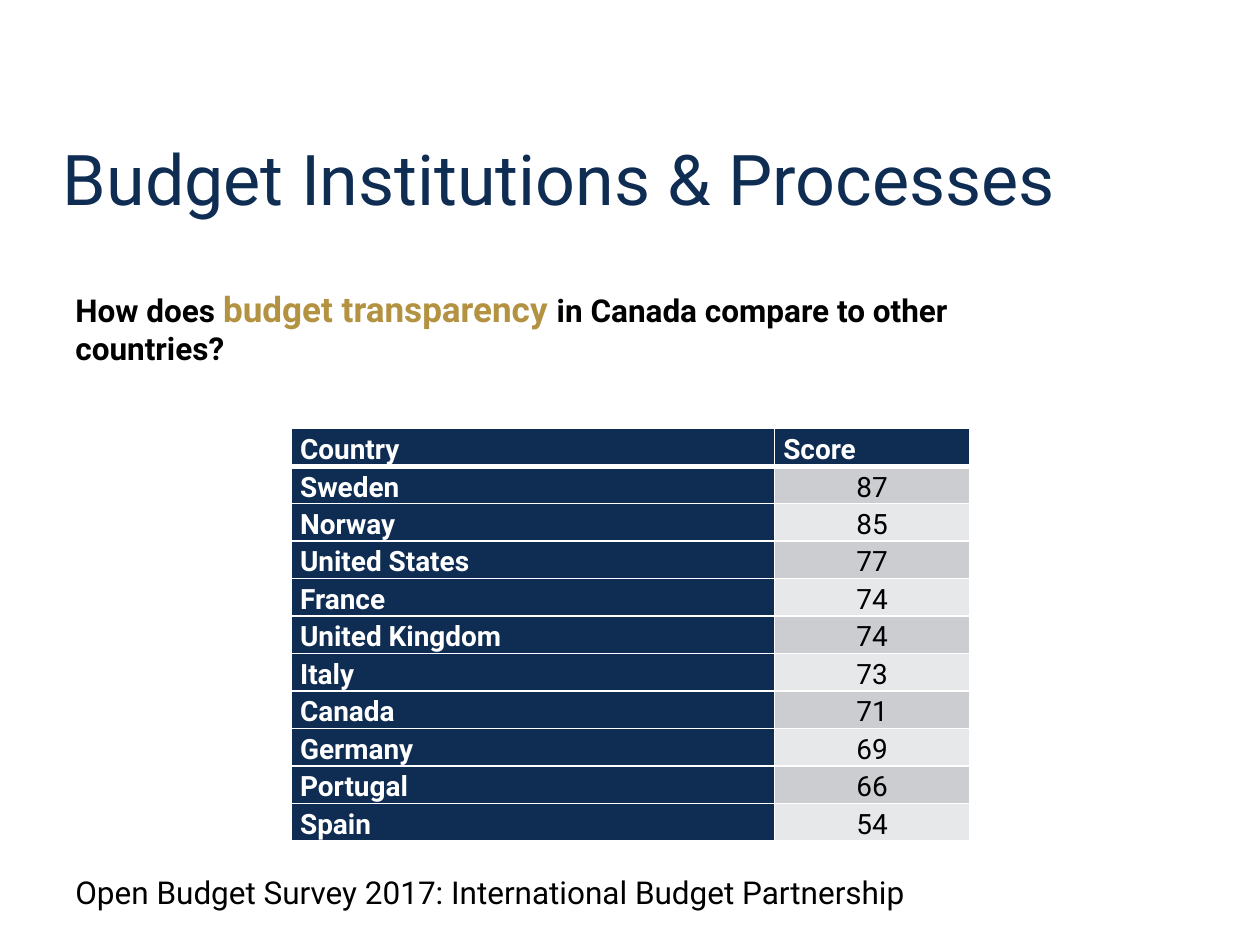
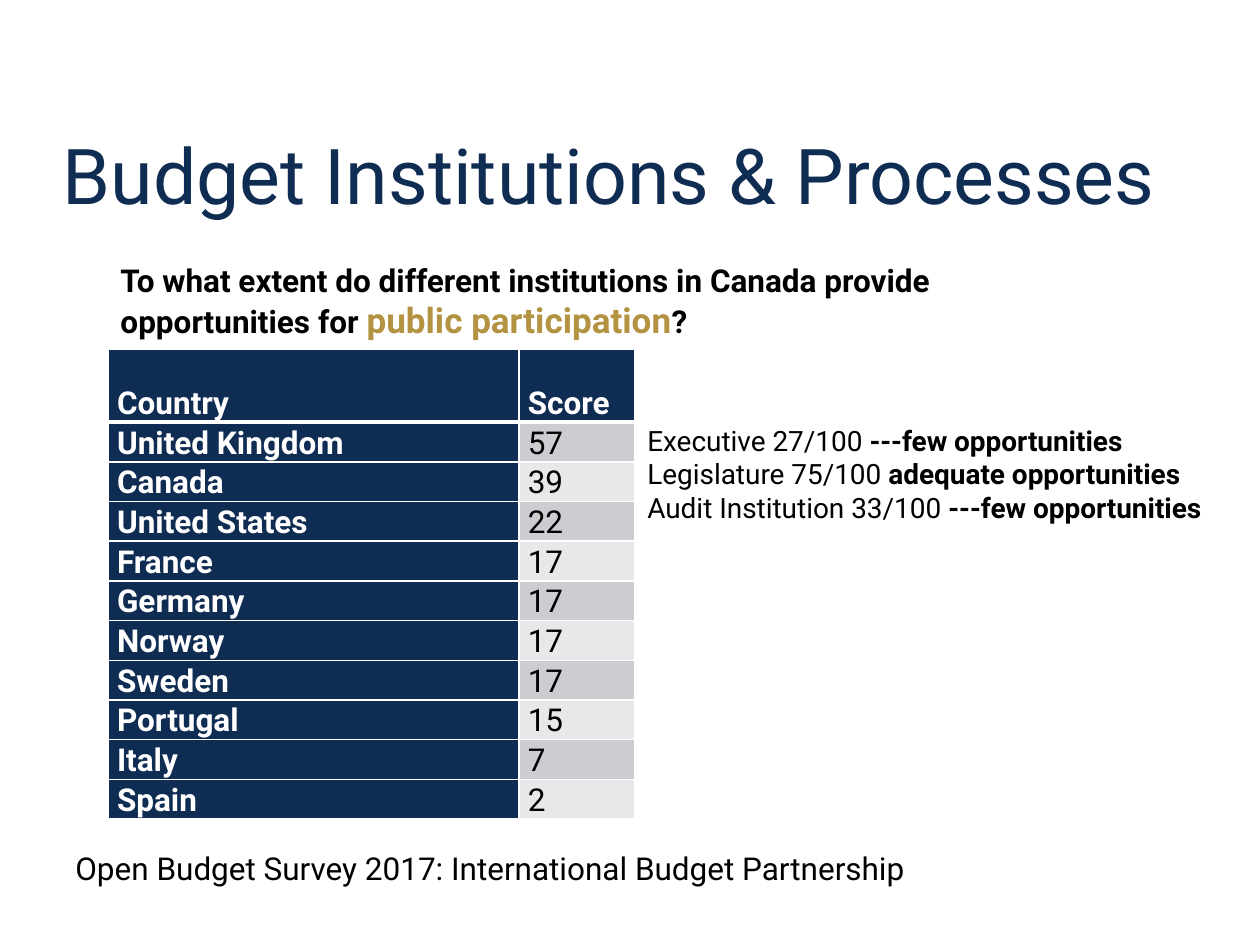
from dataclasses import dataclass

from lxml import etree
from pptx import Presentation
from pptx.dml.color import RGBColor
from pptx.enum.text import MSO_ANCHOR, MSO_AUTO_SIZE, PP_ALIGN
from pptx.oxml.ns import qn
from pptx.util import Cm, Pt

TOP, MIDDLE, BOTTOM = MSO_ANCHOR.TOP, MSO_ANCHOR.MIDDLE, MSO_ANCHOR.BOTTOM
LEFT, CENTER = PP_ALIGN.LEFT, PP_ALIGN.CENTER
GROW = MSO_AUTO_SIZE.SHAPE_TO_FIT_TEXT
NO_FIT = MSO_AUTO_SIZE.NONE


@dataclass(frozen=True)
class Theme:
    font: str = "Roboto"
    navy: str = "0F2C52"
    gold: str = "B39242"
    white: str = "FFFFFF"
    black: str = "000000"
    bands: tuple = ("CCCDD1", "E7E8E9")
    body: int = 18
    accent: int = 20
    small: int = 16
    thin: int = 1
    thick: int = 3


THEME = Theme()
MARGIN = 1.27
CONTENT_W = 22.86
TITLE = "Budget Institutions & Processes"
SOURCE = "Open Budget Survey 2017: International Budget Partnership"

TRANSPARENCY = [
    ("Sweden", 87), ("Norway", 85), ("United States", 77), ("France", 74),
    ("United Kingdom", 74), ("Italy", 73), ("Canada", 71), ("Germany", 69),
    ("Portugal", 66), ("Spain", 54),
]
PARTICIPATION = [
    ("United Kingdom", 57), ("Canada", 39), ("United States", 22),
    ("France", 17), ("Germany", 17), ("Norway", 17), ("Sweden", 17),
    ("Portugal", 15), ("Italy", 7), ("Spain", 2),
]
INSTITUTIONS = [
    ("Executive 27/100 ", "---few opportunities"),
    ("Legislature 75/100 ", "adequate opportunities"),
    ("Audit Institution 33/100 ", "---few opportunities"),
]


def style(font, size, color=THEME.black, bold=False):
    font.name = THEME.font
    font.size = Pt(size)
    font.bold = bold
    font.color.rgb = RGBColor.from_string(color)


def add_box(s, box, anchor=TOP, fit=GROW):
    """Add a wrapping text box at (left, top, width, height) in cm."""
    tf = s.shapes.add_textbox(*map(Cm, box)).text_frame
    tf.word_wrap = True
    tf.auto_size = fit
    tf.vertical_anchor = anchor
    return tf


def add_title(s, size):
    tf = add_box(s, (MARGIN, 2.11, CONTENT_W, 2.44), BOTTOM, NO_FIT)
    tf.margin_left = tf.margin_right = 0
    p = tf.paragraphs[0]
    p.text = TITLE
    style(p.font, size, THEME.navy)


def add_question(s, box, before, accent, after, anchor=TOP):
    p = add_box(s, box, anchor).paragraphs[0]
    for text, size, color in ((before, THEME.body, THEME.black),
                              (accent, THEME.accent, THEME.gold),
                              (after, THEME.body, THEME.black)):
        r = p.add_run()
        r.text = text
        style(r.font, size, color, True)


def add_source(s, top):
    p = add_box(s, (MARGIN, top, CONTENT_W, 1.02)).paragraphs[0]
    p.text = SOURCE
    style(p.font, THEME.body)


def add_institution_notes(s, box):
    tf = add_box(s, box)
    for i, (score, verdict) in enumerate(INSTITUTIONS):
        p = tf.add_paragraph() if i else tf.paragraphs[0]
        for text, bold in ((score, False), (verdict, True)):
            r = p.add_run()
            r.text = text
            style(r.font, THEME.small, bold=bold)


def set_borders(cell, top, bottom):
    tc_pr = cell._tc.get_or_add_tcPr()
    widths = {"lnL": THEME.thin, "lnR": THEME.thin, "lnT": top, "lnB": bottom}
    for tag, width in widths.items():
        ln = etree.SubElement(tc_pr, qn(f"a:{tag}"), w=str(Pt(width)))
        fill = etree.SubElement(ln, qn("a:solidFill"))
        etree.SubElement(fill, qn("a:srgbClr"), val=THEME.white)


def fill_cell(cell, text, row, col, size, score_align):
    is_score = row > 0 and col == 1
    set_borders(cell, THEME.thick if row == 1 else THEME.thin,
                THEME.thick if row == 0 else THEME.thin)
    cell.fill.solid()
    color = THEME.bands[(row - 1) % 2] if is_score else THEME.navy
    cell.fill.fore_color.rgb = RGBColor.from_string(color)
    cell.margin_left = cell.margin_right = Cm(0.18)
    cell.margin_top = cell.margin_bottom = 0
    cell.vertical_anchor = BOTTOM
    p = cell.text_frame.paragraphs[0]
    p.text = str(text)
    p.alignment = score_align if is_score else LEFT
    style(p.font, size, THEME.black if is_score else THEME.white, not is_score)


def add_score_table(s, box, country_w, header_h, scores, size, score_align):
    """Country and score table; body rows share the height below the header."""
    width, height = box[2:]
    rows = [("Country", "Score"), *scores]
    table = s.shapes.add_table(len(rows), 2, *map(Cm, box)).table
    table.columns[0].width = Cm(country_w)
    table.columns[1].width = Cm(width - country_w)
    row_h = (height - header_h) / len(scores)
    for i, values in enumerate(rows):
        table.rows[i].height = Cm(row_h if i else header_h)
        for j, text in enumerate(values):
            fill_cell(table.cell(i, j), text, i, j, size, score_align)


def add_transparency_slide(s):
    add_title(s, 40)
    add_score_table(s, (5.87, 8.64, 13.68, 8.31), 9.74, 0.76,
                    TRANSPARENCY, THEME.small, CENTER)
    add_question(s, (MARGIN, 5.66, 20.68, 1.88), "How does ",
                 "budget transparency ",
                 "in Canada compare to other countries?", MIDDLE)
    add_source(s, 17.48)


def add_participation_slide(s):
    add_title(s, 44)
    add_score_table(s, (2.18, 7.04, 10.62, 9.47), 8.28, 1.47,
                    PARTICIPATION, THEME.body, LEFT)
    add_question(s, (2.18, 5.13, 19.76, 1.88),
                 "To what extent do different institutions in Canada provide "
                 "opportunities for ", "public participation", "?")
    add_institution_notes(s, (12.8, 8.41, 12.7, 2.31))
    add_source(s, 16.99)


def main():
    prs = Presentation()
    prs.slide_width, prs.slide_height = Cm(25.4), Cm(19.05)
    for build in (add_transparency_slide, add_participation_slide):
        build(prs.slides.add_slide(prs.slide_layouts[6]))
    prs.save("out.pptx")


if __name__ == "__main__":
    main()
